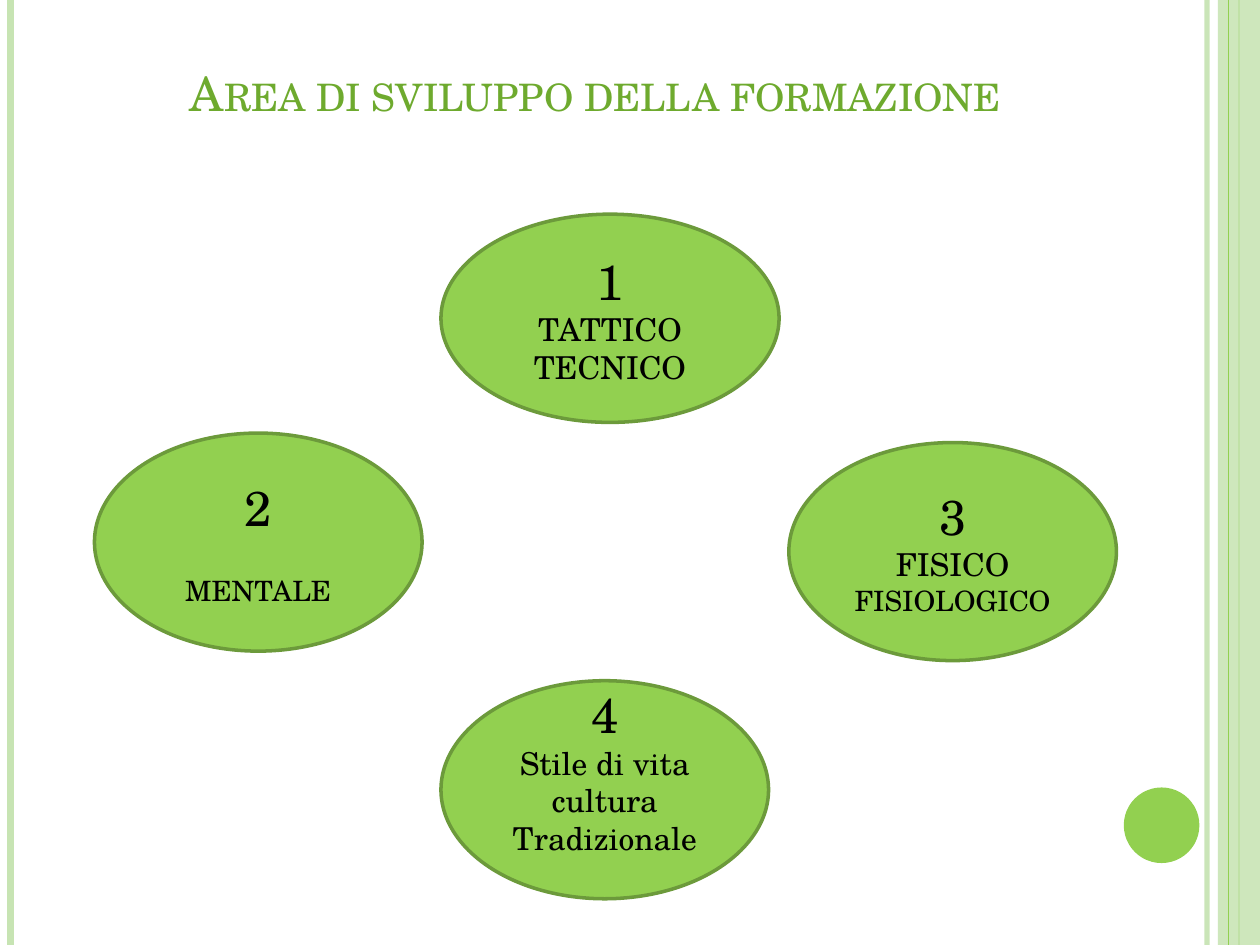
import pptx
import pptx.util
import pptx.dml.color
import pptx.enum.shapes
import pptx.enum.text
import pptx.oxml.ns
from lxml import etree

Pt = pptx.util.Pt
RGBColor = pptx.dml.color.RGBColor
SHAPE = pptx.enum.shapes.MSO_SHAPE
ANCHOR = pptx.enum.text.MSO_ANCHOR
ALIGN = pptx.enum.text.PP_ALIGN
qn = pptx.oxml.ns.qn

LIME = RGBColor(0x92, 0xD0, 0x50)
PALE_GREEN = RGBColor(0xC7, 0xE4, 0xB3)
OLIVE = RGBColor(0x6C, 0x9A, 0x3B)
TITLE_GREEN = RGBColor(0x6E, 0xAA, 0x2E)
BLACK = RGBColor(0, 0, 0)
FONT = "TeX Gyre Schola"
PAGE_WIDTH, PAGE_HEIGHT = 720, 540
BLANK_LINE = 21.4


def apply(target, formats):
    """Set every attribute named in a dict of format values."""
    for name, value in formats.items():
        setattr(target, name, value)


def set_alpha(element, percent):
    """Give the first solid colour under an element an opacity."""
    colour = next(element.iter(qn("a:srgbClr")))
    etree.SubElement(colour, qn("a:alpha"), val=str(percent * 1000))


def add_rule(slide, x, width, colour, opacity=100):
    """Draw a vertical line over the full height of the page."""
    rule = slide.shapes.add_connector(
        pptx.enum.shapes.MSO_CONNECTOR.STRAIGHT, Pt(x), Pt(0), Pt(x), Pt(PAGE_HEIGHT))
    rule.line.width = Pt(width)
    rule.line.color.rgb = colour
    properties = rule.line._get_or_add_ln().getparent()
    etree.SubElement(properties, qn("a:effectLst"))
    if opacity < 100:
        set_alpha(properties, opacity)


def add_figure(slide, preset, box, colour, outline=None):
    """Add a flat preset shape, outlined only when a colour is given."""
    figure = slide.shapes.add_shape(preset, *map(Pt, box))
    figure.shadow.inherit = False
    figure.fill.solid()
    figure.fill.fore_color.rgb = colour
    if outline is None:
        figure.line.fill.background()
    else:
        figure.line.color.rgb = outline
        figure.line.width = Pt(2)
    return figure


def write_line(paragraph, text, size, colour):
    """Write one run into a paragraph and return it."""
    run = paragraph.add_run()
    apply(run, {"text": text})
    apply(run.font, {"name": FONT, "size": Pt(size)})
    run.font.color.rgb = colour
    return run


def add_title(slide, text):
    """Add the indented small-caps heading."""
    heading = slide.shapes.add_textbox(Pt(65.5), Pt(26), Pt(571), Pt(46.8))
    frame = heading.text_frame
    apply(frame, {"word_wrap": True, "vertical_anchor": ANCHOR.BOTTOM})
    paragraph = frame.paragraphs[0]
    paragraph._p.get_or_add_pPr().set("marL", str(Pt(36)))
    run = write_line(paragraph, text, 27, TITLE_GREEN)
    run.font._element.set("cap", "small")


def add_area(slide, box, lines, gap=0, bottom=3.6):
    """Add a training-area ellipse with its number and centred label."""
    area = add_figure(slide, SHAPE.OVAL, box, LIME, OLIVE)
    frame = area.text_frame
    apply(frame, {"word_wrap": True, "vertical_anchor": ANCHOR.MIDDLE,
                  "margin_bottom": Pt(bottom)})
    for index, (text, size) in enumerate(lines):
        paragraph = frame.add_paragraph() if index else frame.paragraphs[0]
        apply(paragraph, {"alignment": ALIGN.CENTER,
                          "space_before": Pt(gap if index == 1 else 0)})
        write_line(paragraph, text, size, BLACK)


def add_frame(slide):
    """Draw the stripes at the page edges and the dot."""
    add_rule(slide, 689.8, 3, PALE_GREEN, 93)
    add_rule(slide, 6, 4.5, PALE_GREEN)
    add_rule(slide, 708, 1.5, LIME)
    band = add_figure(slide, SHAPE.RECTANGLE, (696, 0, PAGE_WIDTH - 696, PAGE_HEIGHT), PALE_GREEN)
    set_alpha(band._element.spPr, 87)
    add_rule(slide, 702, 0.75, LIME)
    add_figure(slide, SHAPE.OVAL, (642.2, 450, 43.2, 43.2), LIME)


def main():
    """Build and save the slide."""
    deck = pptx.Presentation()
    apply(deck, {"slide_width": Pt(PAGE_WIDTH), "slide_height": Pt(PAGE_HEIGHT)})
    slide = deck.slides.add_slide(deck.slide_layouts[6])
    add_frame(slide)
    add_title(slide, "Area di sviluppo della formazione")
    add_area(slide, (252, 122.4, 193.2, 119),
             [("1", 28), ("TATTICO", 18), ("TECNICO", 18)])
    add_area(slide, (54, 247.5, 187.2, 124.6),
             [("2", 28), ("MENTALE", 16)], gap=BLANK_LINE)
    add_area(slide, (450.8, 252.9, 187.2, 124.6),
             [("3", 28), ("FISICO", 18), ("FISIOLOGICO", 16)])
    add_area(slide, (252, 389, 187.2, 124.6),
             [("4", 28), ("Stile di vita cultura", 18), ("Tradizionale", 18)],
             bottom=3.6 + BLANK_LINE)
    deck.save("out.pptx")


if __name__ == "__main__":
    main()
